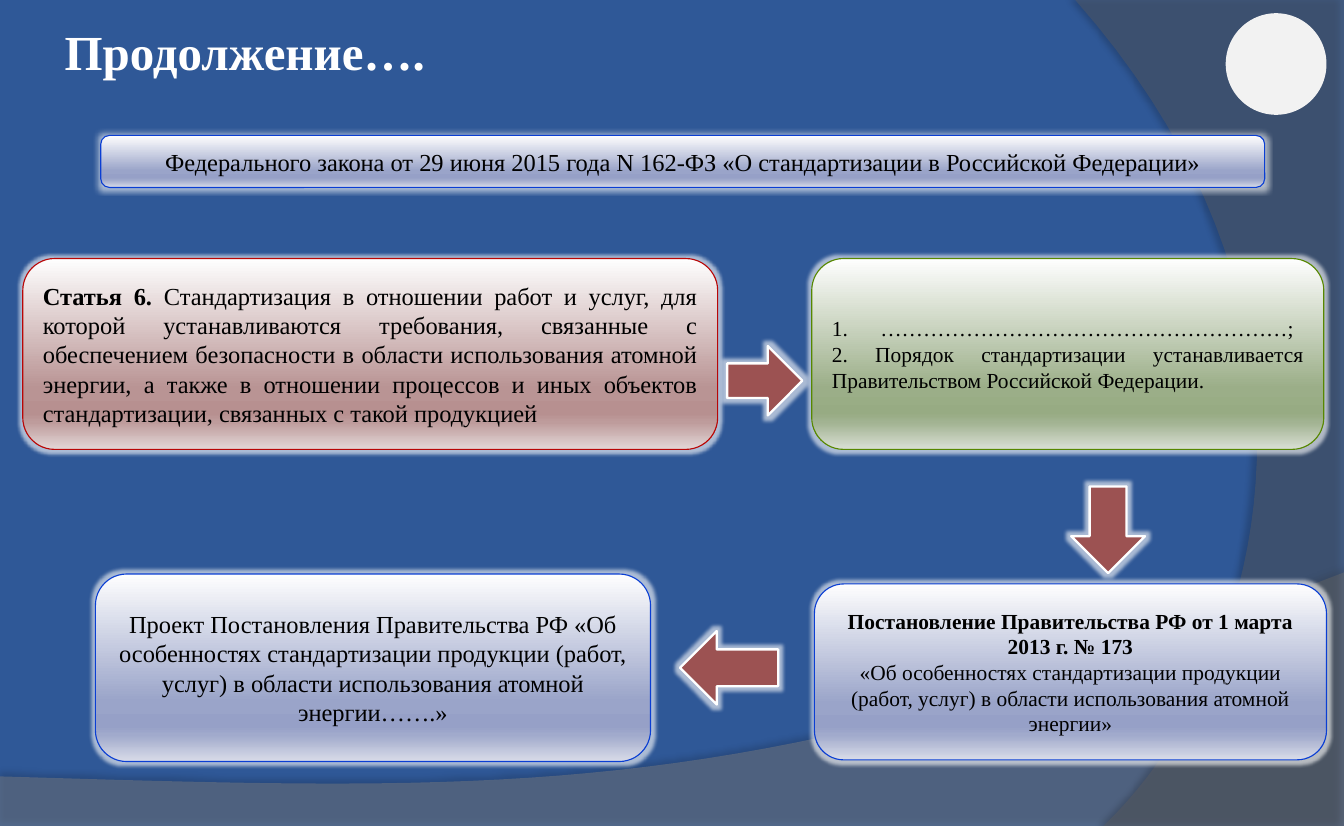
from lxml import etree
from pptx import Presentation
from pptx.dml.color import RGBColor
from pptx.enum.shapes import MSO_SHAPE
from pptx.enum.text import MSO_ANCHOR, MSO_AUTO_SIZE, PP_ALIGN
from pptx.oxml.ns import qn
from pptx.util import Inches, Pt

ROUND, OVAL = MSO_SHAPE.ROUNDED_RECTANGLE, MSO_SHAPE.OVAL
RIGHT, DOWN, LEFT = MSO_SHAPE.RIGHT_ARROW, MSO_SHAPE.DOWN_ARROW, MSO_SHAPE.LEFT_ARROW
TOP, MIDDLE = MSO_ANCHOR.TOP, MSO_ANCHOR.MIDDLE
AL_LEFT, CENTER, JUSTIFY = PP_ALIGN.LEFT, PP_ALIGN.CENTER, PP_ALIGN.JUSTIFY

NAVY = RGBColor(0x2F, 0x58, 0x97)
WHITE = RGBColor(0xFF, 0xFF, 0xFF)
BLACK = RGBColor(0, 0, 0)
PALE = RGBColor(0xF2, 0xF2, 0xF2)
GREY = RGBColor(0x7F, 0x7F, 0x7F)
DARK_GREY = RGBColor(0x5E, 0x5E, 0x5E)
BRICK = RGBColor(0x9C, 0x52, 0x52)
BLUE_LINE = RGBColor(0x0A, 0x3E, 0xD3)
RED_LINE = RGBColor(0xB8, 0x06, 0x06)
GREEN_LINE = RGBColor(0x56, 0x87, 0x00)

# Gradient colours for each outline colour, at the shared stops
STOPS = (0, 68, 81, 86, 100)
GRADIENTS = {
    BLUE_LINE: ("FEFEFE", "9AA4C9", "96A0C7", "A1AACC", "D9DCE8"),
    RED_LINE: ("FEFEFE", "B99494", "B79090", "BE9C9C", "E3D7D7"),
    GREEN_LINE: ("FEFEFE", "9BAE88", "97AB83", "A2B392", "D9DFD4"),
}

prs = Presentation()
prs.slide_width, prs.slide_height = Inches(12.21), Inches(7.5)
W, H = prs.slide_width, prs.slide_height
s = prs.slides.add_slide(prs.slide_layouts[5])
s.background.fill.solid()
s.background.fill.fore_color.rgb = NAVY


def area(x, y, w, h):
    """Turn percentages of the slide into left, top, width, height."""
    return int(W * x / 100), int(H * y / 100), int(W * w / 100), int(H * h / 100)


def write(tf, paragraphs, size=16, color=BLACK, align=CENTER, anchor=MIDDLE, tab=None):
    """Fill a frame; each paragraph is a list of (text, bold), one ending in a newline breaks."""
    tf.word_wrap = True
    tf.vertical_anchor = anchor
    for i, runs in enumerate(paragraphs):
        p = tf.paragraphs[0] if i == 0 else tf.add_paragraph()
        p.alignment = align
        if tab:
            tabs = etree.SubElement(p._p.get_or_add_pPr(), qn("a:tabLst"))
            etree.SubElement(tabs, qn("a:tab"), pos=str(Inches(tab)), algn="l")
        for text, bold in runs:
            r = p.add_run()
            r.text = text.rstrip("\n")
            r.font.name, r.font.size = "Times New Roman", Pt(size)
            r.font.bold, r.font.color.rgb = bold, color
            if text.endswith("\n"):
                p.add_line_break()


effects = []  # (shape, effect name, colour, opacity, attributes)

# Background waves: three corners, then a Bezier curve, in percent of the slide
waves = [
    ([(0, 94), (0, 100), (100, 100), (100, 69.3)],
     [(55.9, 97.2), (39.1, 95.9), (0, 94)], GREY, 45, 35, 4, 3.5, 270),
    ([(80, 0), (100, 0), (100, 100), (82.1, 100)],
     [(93.4, 82.5), (101.7, 40), (80, 0)], DARK_GREY, 40, 45, 4, 4, 180),
]
for corners, controls, color, opacity, shade, blur, dist, angle in waves:
    curve = [corners[-1]] + controls
    points = corners[1:]
    for i in range(1, 41):
        t = i / 40
        weights = ((1 - t) ** 3, 3 * t * (1 - t) ** 2, 3 * t * t * (1 - t), t ** 3)
        points.append([sum(k * c[axis] for k, c in zip(weights, curve)) for axis in (0, 1)])
    start, *rest = [(W * x / 100, H * y / 100) for x, y in corners[:1] + points]
    fb = s.shapes.build_freeform(*start)
    fb.add_line_segments(rest)
    sp = fb.convert_to_shape()
    sp.fill.solid()
    sp.fill.fore_color.rgb = color
    fill = sp._element.spPr.find(qn("a:solidFill"))
    etree.SubElement(fill[0], qn("a:alpha"), val=str(opacity * 1000))
    sp.line.fill.background()
    effects.append((sp, "a:outerShdw", BLACK, shade, {
        "blurRad": Pt(blur), "dist": Pt(dist), "dir": angle * 60000}))

# Emblem disc
disc = s.shapes.add_shape(OVAL, *area(91.2, 1.6, 7.5, 12.3))
disc.shadow.inherit = False
disc.fill.solid()
disc.fill.fore_color.rgb = PALE
disc.line.fill.background()

# Title
title = s.shapes.title
title.left, title.top, title.width, title.height = area(4.8, 4, 85.3, 7.2)
tf = title.text_frame
tf.auto_size = MSO_AUTO_SIZE.NONE
tf.margin_left = tf.margin_top = tf.margin_right = tf.margin_bottom = 0
write(tf, [[("Продолжение….", True)]], size=32, color=WHITE, align=AL_LEFT, anchor=TOP)
tf.paragraphs[0].line_spacing = 0.8

# Gradient boxes: place, outline, paragraphs, text format
boxes = [
    ((60.6, 70.7, 38.1, 21.3), BLUE_LINE, [[
        ("Постановление Правительства РФ от 1 марта 2013\u00a0г. №\u00a0173\n", True),
        ("«Об особенностях стандартизации продукции (работ, услуг) в области "
         "использования атомной энергии»", False)]], {"size": 14}),
    ((7.1, 69.5, 41.3, 22.7), BLUE_LINE, [[
        ("Проект Постановления Правительства РФ «Об особенностях стандартизации продукции "
         "(работ, услуг) в области использования атомной энергии…….»", False)]], {}),
    ((7.5, 16.4, 86.6, 6.3), BLUE_LINE, [[
        ("Федерального закона от 29 июня 2015 года N 162-ФЗ «О стандартизации "
         "в Российской Федерации»", False)]], {}),
    ((1.7, 31.3, 51.7, 23.1), RED_LINE, [[
        ("Статья 6.", True),
        (" Стандартизация в отношении работ и услуг, для которой устанавливаются требования, "
         "связанные с обеспечением безопасности в области использования атомной энергии, "
         "а также в отношении процессов и иных объектов стандартизации, связанных с такой "
         "продукцией", False)]], {"align": JUSTIFY}),
    ((60.4, 31.3, 38.1, 23.1), GREEN_LINE, [
        [("1.\t…………………………………………………;", False)],
        [("2. Порядок стандартизации устанавливается Правительством Российской Федерации.",
          False)]], {"size": 14, "align": JUSTIFY, "tab": 0.44}),
]
for place, outline, paragraphs, style in boxes:
    sp = s.shapes.add_shape(ROUND, *area(*place))
    sp.fill.gradient()
    sp.fill.gradient_angle = 270
    stops = sp._element.spPr.find(qn("a:gradFill")).find(qn("a:gsLst"))
    for gs in list(stops):
        stops.remove(gs)
    for pos, color in zip(STOPS, GRADIENTS[outline]):
        gs = etree.SubElement(stops, qn("a:gs"), pos=str(pos * 1000))
        etree.SubElement(gs, qn("a:srgbClr"), val=color)
    sp.line.color.rgb, sp.line.width = outline, Pt(0.75)
    write(sp.text_frame, paragraphs, **style)
    effects.append((sp, "a:glow", WHITE, 60, {"rad": Pt(5)}))

# Block arrows between the boxes
arrows = [
    (RIGHT, (54.1, 41.9, 5.6, 8.4)),
    (DOWN, (79.7, 58.9, 5.5, 10.5)),
    (LEFT, (50.6, 76.4, 7.3, 8.9)),
]
for kind, place in arrows:
    sp = s.shapes.add_shape(kind, *area(*place))
    sp.fill.solid()
    sp.fill.fore_color.rgb = BRICK
    sp.line.color.rgb, sp.line.width = WHITE, Pt(1.5)
    effects.append((sp, "a:glow", WHITE, 60, {"rad": Pt(5)}))

# Shadows and glows
for sp, name, color, opacity, attributes in effects:
    sp.shadow.inherit = False
    effect = etree.SubElement(sp._element.spPr.find(qn("a:effectLst")), qn(name))
    for key, value in attributes.items():
        effect.set(key, str(int(value)))
    clr = etree.SubElement(effect, qn("a:srgbClr"), val=str(color))
    etree.SubElement(clr, qn("a:alpha"), val=str(opacity * 1000))

prs.save("out.pptx")
